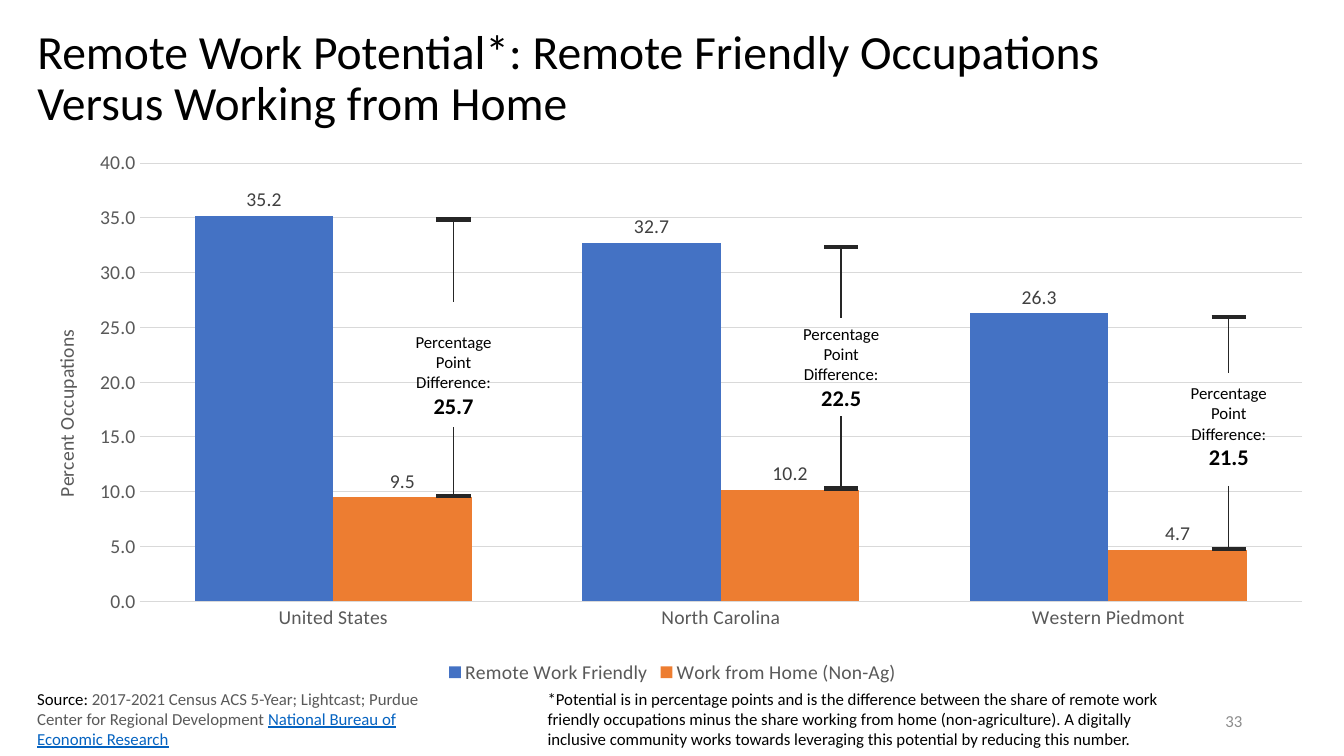
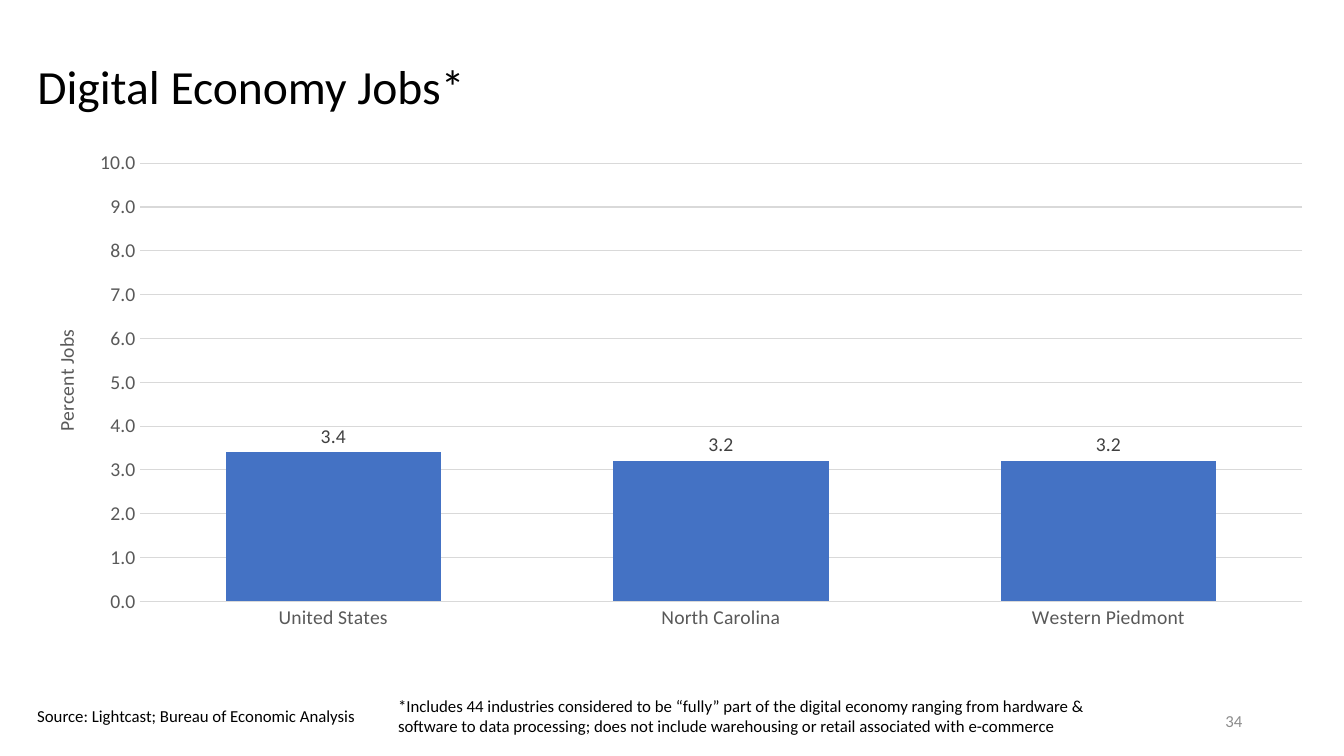
from lxml import etree
from pptx import Presentation
from pptx import util as u
from pptx.chart.data import CategoryChartData
from pptx.dml.color import RGBColor
from pptx.enum import chart as ch, shapes, text
from pptx.oxml.ns import qn

# Shared look
W, H = 13.33, 7.5
FONT = "Calibri"
C = {"text": "000000", "muted": "595959", "label": "404040", "number": "8C8C8C",
     "grid": "D9D9D9", "mark": "262626", "link": "0563C1",
     "blue": "4472C4", "orange": "ED7D31"}
REGIONS = ["United States", "North Carolina", "Western Piedmont"]
REMOTE, HOME = [35.2, 32.7, 26.3], [9.5, 10.2, 4.7]

# Positions are percentages of the slide's width and height
LEFT = 2.03
CHART = (LEFT, 19.07, 96.02, 72)
PLOT = (0.087, 0.035, 0.901, 0.805)  # shares of the chart
BAR_GAP = 80


def px(share):
    return u.Inches(W * share / 100)


def py(share):
    return u.Inches(H * share / 100)


def box(x, y, w, h):
    return px(x), py(y), px(w), py(h)


def rgb(name):
    return RGBColor.from_string(C[name])


def style(font, size, color="text", bold=False):
    font.name, font.size, font.bold = FONT, u.Pt(size), bold
    font.color.rgb = rgb(color)


# Text
def add_run(p, words, size=12, color="text", bold=False, underline=False):
    r = p.add_run()
    r.text = words
    style(r.font, size, color, bold)
    if underline:
        r.font.underline = True


def add_lines(p, lines, size):
    for i, line in enumerate(lines):
        if i:
            p.add_line_break()
        add_run(p, line, size)


def add_text(s, at, align=text.PP_ALIGN.LEFT, grow=True):
    sp = s.shapes.add_textbox(*box(*at))
    tf = sp.text_frame
    tf.word_wrap = True
    if grow:
        tf.auto_size = text.MSO_AUTO_SIZE.SHAPE_TO_FIT_TEXT
    tf.paragraphs[0].alignment = align
    return sp


def add_note(s, at, *runs):
    p = add_text(s, at).text_frame.paragraphs[0]
    for words, *look in runs:
        add_run(p, words, 12, *look)


def add_slide(prs, title_lines, title_top, number):
    s = prs.slides.add_slide(prs.slide_layouts[5])
    title = s.shapes.title
    title.left, title.top, title.width, title.height = box(
        LEFT, title_top, 95.72, CHART[1] - title_top)
    tf = title.text_frame
    tf.word_wrap, tf.auto_size = True, text.MSO_AUTO_SIZE.NONE
    tf.vertical_anchor = text.MSO_ANCHOR.MIDDLE
    p = tf.paragraphs[0]
    p.alignment, p.line_spacing = text.PP_ALIGN.LEFT, 0.9
    add_lines(p, title_lines, 34)

    sp = add_text(s, (70.67, 92.67, 22.5, 5.33), text.PP_ALIGN.RIGHT, grow=False)
    sp.text_frame.vertical_anchor = text.MSO_ANCHOR.MIDDLE
    add_run(sp.text_frame.paragraphs[0], number, 12, "number")
    return s


# Charts
def set_layout(parent, index, **values):
    for old in parent.findall(qn("c:layout")):
        parent.remove(old)
    layout = etree.Element(qn("c:layout"))
    manual = etree.SubElement(layout, qn("c:manualLayout"))
    for key, value in values.items():
        etree.SubElement(manual, qn("c:" + key)).set("val", str(value))
    parent.insert(index, layout)


def add_axis_title(axis, words):
    axis.has_title = True
    title = axis.axis_title
    add_run(title.text_frame.paragraphs[0], words, 14, "muted")
    body = title._element.find(".//" + qn("a:bodyPr"))
    body.set("rot", "-5400000")
    body.set("vert", "horz")
    set_layout(title._element, 1, xMode="edge", yMode="edge", x=0.017, y=0.334)


def add_columns(s, series, axis_words, top, step, legend=False):
    data = CategoryChartData(number_format="0.0")
    data.categories = REGIONS
    for name, values, _ in series:
        data.add_series(name, values)
    chart = s.shapes.add_chart(ch.XL_CHART_TYPE.COLUMN_CLUSTERED,
                               *box(*CHART), data).chart
    style(chart.font, 14)
    chart.has_title = False
    chart.has_legend = legend
    if legend:
        chart.legend.position = ch.XL_LEGEND_POSITION.BOTTOM
        chart.legend.include_in_layout = False
        style(chart.legend.font, 14, "muted")

    cat, val = chart.category_axis, chart.value_axis
    for axis in (cat, val):
        axis.major_tick_mark = axis.minor_tick_mark = ch.XL_TICK_MARK.NONE
        style(axis.tick_labels.font, 14, "muted")
    val.minimum_scale, val.maximum_scale, val.major_unit = 0, top, step
    val.has_major_gridlines = True
    for line in (cat.format.line, val.major_gridlines.format.line):
        line.color.rgb, line.width = rgb("grid"), u.Pt(0.75)
    val.format.line.fill.background()
    val.tick_labels.number_format = "0.0"
    val.tick_labels.number_format_is_linked = False
    add_axis_title(val, axis_words)

    plot = chart.plots[0]
    plot.gap_width, plot.vary_by_categories = BAR_GAP, False
    for bars, (_, _, color) in zip(plot.series, series):
        bars.format.fill.solid()
        bars.format.fill.fore_color.rgb = rgb(color)
        labels = bars.data_labels
        labels.show_value = True
        labels.number_format, labels.number_format_is_linked = "0.0", False
        labels.position = ch.XL_LABEL_POSITION.OUTSIDE_END
        style(labels.font, 14, "label")
    x, y, w, h = PLOT
    set_layout(chart._chartSpace.find(".//" + qn("c:plotArea")), 0,
               layoutTarget="inner", xMode="edge", yMode="edge", x=x, y=y, w=w, h=h)


# Difference markers
def add_line(s, x1, y1, x2, y2, width):
    line = s.shapes.add_connector(shapes.MSO_CONNECTOR.STRAIGHT,
                                  px(x1), py(y1), px(x2), py(y2))
    line.line.color.rgb, line.line.width = rgb("mark"), u.Pt(width)
    etree.SubElement(line._element.spPr, qn("a:effectLst"))
    return line


def value_y(value, top):
    x, y, w, h = PLOT
    return CHART[1] + CHART[3] * (y + h * (1 - value / top))


def second_bar_edge(i):
    category = CHART[2] * PLOT[2] / len(REGIONS)
    share = (BAR_GAP / 2 + 200) / (BAR_GAP + 200)
    return CHART[0] + CHART[2] * PLOT[0] + category * (i + share)


def add_difference(s, i, words, label_top, upper_end, lower_start):
    cap, label_w = 2.55, 9.83
    x = second_bar_edge(i) - 1.35
    high, low = value_y(REMOTE[i], 40) + 0.5, value_y(HOME[i], 40) - 0.15

    label = add_text(s, (x - label_w / 2, label_top, label_w, 13.07),
                     text.PP_ALIGN.CENTER)
    tf = label.text_frame
    add_lines(tf.paragraphs[0], ["Percentage", "Point"], 12)
    p = tf.add_paragraph()
    p.alignment = text.PP_ALIGN.CENTER
    add_lines(p, ["Difference:"], 12)
    p.add_line_break()
    add_run(p, words, 16, bold=True)

    for y in (low, high):
        add_line(s, x - cap / 2, y, x + cap / 2, y, 3)
    stem = add_line(s, x, high, x, upper_end, 1)
    if upper_end == label_top:
        stem.end_connect(label, 0)
    add_line(s, x, lower_start, x, low, 1)


def main():
    prs = Presentation()
    prs.slide_width, prs.slide_height = u.Inches(W), u.Inches(H)

    # Remote work potential
    s = add_slide(prs, ["Remote Work Potential*: Remote Friendly Occupations",
                        "Versus Working from Home"], 2, "33")
    add_columns(s, [("Remote Work Friendly", REMOTE, "blue"),
                    ("Work from Home (Non-Ag)", HOME, "orange")],
                "Percent Occupations", 40, 5, legend=True)
    differences = [("25.7", 43.2, 40, 56.53),
                   ("22.5", 42.13, 42.13, 55.07),
                   ("21.5", 50, 49.33, 64.27)]
    for i, difference in enumerate(differences):
        add_difference(s, i, *difference)
    add_note(s, (LEFT, 90.4, 33, 9.47),
             ("Source: ",),
             ("2017-2021 Census ACS 5-Year; Lightcast; Purdue Center for Regional "
              "Development ", "muted"),
             ("National Bureau of Economic Research", "link", False, True))
    add_note(s, (40, 90.4, 49.06, 9.47),
             ("*Potential is in percentage points and is the difference between the share "
              "of remote work friendly occupations minus the share working from home "
              "(non-agriculture). A digitally inclusive community works towards leveraging "
              "this potential by reducing this number.",))

    # Digital economy jobs
    s = add_slide(prs, ["Digital Economy Jobs*"], 4.53, "34")
    add_columns(s, [("Series 1", [3.4, 3.2, 3.2], "blue")], "Percent Jobs", 10, 1)
    add_note(s, (LEFT, 92.67, 25.6, 4),
             ("Source: Lightcast; Bureau of Economic Analysis",))
    add_note(s, (28.88, 91.33, 53.04, 6.67),
             ("*Includes 44 industries considered to be “fully” part of the digital economy "
              "ranging from hardware & software to data processing; does not include "
              "warehousing or retail associated with e-commerce",))

    prs.save("out.pptx")


if __name__ == "__main__":
    main()
